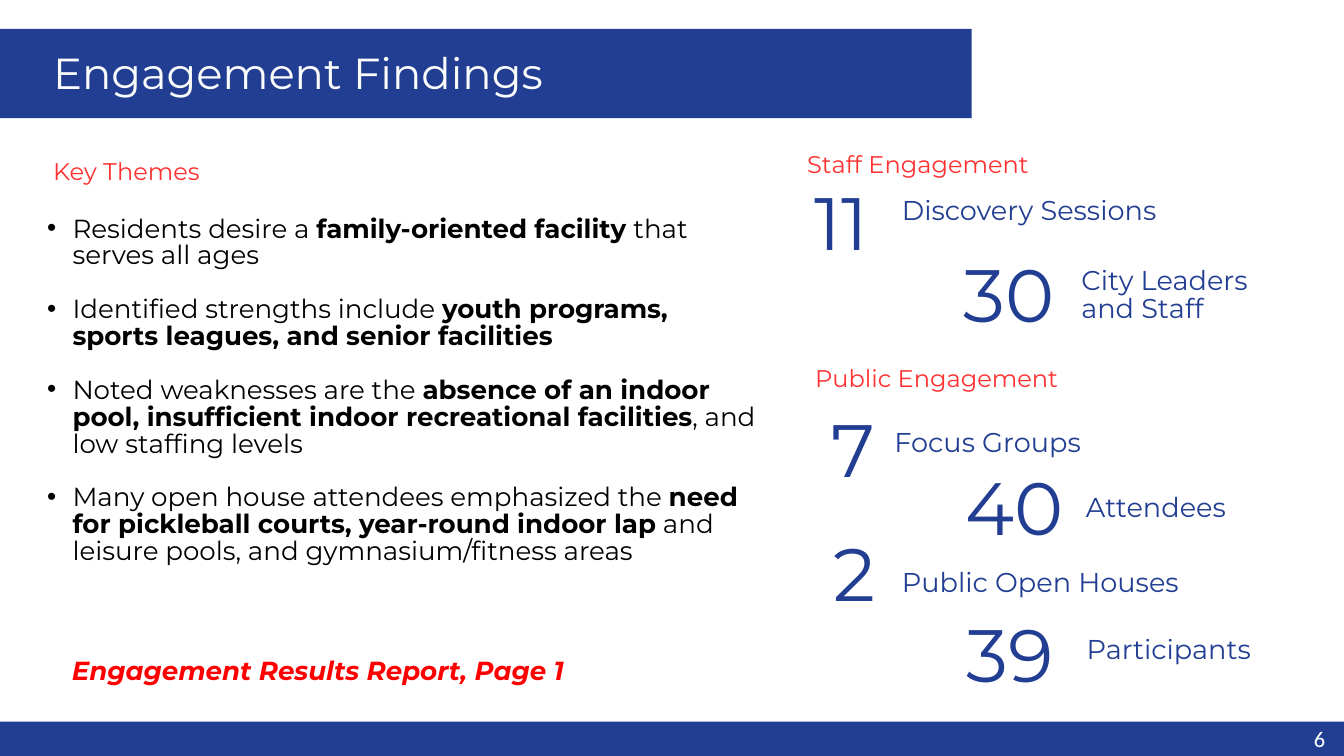
from lxml import etree
from pptx import Presentation
from pptx.dml.color import RGBColor
from pptx.enum import shapes, text
from pptx.oxml import ns
from pptx.util import Inches, Pt

BLUE = RGBColor(0x22, 0x3E, 0x92)
CORAL = RGBColor(0xFF, 0x31, 0x31)
RED = RGBColor(0xFF, 0, 0)
BLACK = RGBColor(0, 0, 0)
PALE = RGBColor(0xFB, 0xFC, 0xFC)
WHITE = RGBColor(0xFF, 0xFF, 0xFF)

# left, top, width, height
BARS = [(0, 10.74, 20, 0.51), (0, 0.43, 14.46, 1.33)]

HEADS = [
    ("Key Themes", 0.79, 2.4),
    ("Staff Engagement", 12.01, 2.29),
    ("Public Engagement", 12.13, 5.48),
]

# Each theme is a list of (words, bold) runs
THEMES = [
    [("Residents desire a ", False), ("family-oriented facility ", True),
     ("that serves all ages", False)],
    [("Identified strengths include ", False),
     ("youth programs, sports leagues, and senior facilities", True)],
    [("Noted weaknesses are the ", False),
     ("absence of an indoor pool, insufficient indoor recreational facilities", True),
     (", and low staffing levels", False)],
    [("Many open house attendees emphasized the ", False),
     ("need for pickleball courts, year-round indoor lap", True),
     (" and leisure pools, and gymnasium/fitness areas", False)],
]

# number, its left and top, label, its left, top and width
COUNTS = [
    ("11", 12.12, 2.84, "Discovery Sessions", 13.42, 2.96, 5.75),
    ("30", 14.34, 3.91, "City Leaders and Staff", 16.09, 4, 3.32),
    ("7", 12.37, 6.22, "Focus Groups", 13.31, 6.4, 3.32),
    ("40", 14.37, 7.07, "Attendees", 16.16, 7.37, 3.32),
    ("2", 12.41, 8.06, "Public Open Houses", 13.42, 8.49, 4.78),
    ("39", 14.38, 9.26, "Participants", 16.17, 9.49, 3.32),
]


def add_bullet(para, indent):
    props = para._p.get_or_add_pPr()
    props.set("marL", str(Inches(indent)))
    props.set("indent", str(-Inches(indent)))
    font = etree.SubElement(props, ns.qn("a:buFont"))
    font.set("typeface", "Arial")
    mark = etree.SubElement(props, ns.qn("a:buChar"))
    mark.set("char", "•")


def add_text(slide, paras, left, top, width, height, size, color, line=None,
             font="Montserrat", bold=False, italic=False, bullet=False, gap=0,
             pad=(0, 0), align=text.PP_ALIGN.LEFT, anchor=text.MSO_ANCHOR.TOP):
    """Add a text box; paras is a string or a list of lists of (words, bold)."""
    if isinstance(paras, str):
        paras = [[(paras, bold)]]
    box = slide.shapes.add_textbox(*map(Inches, (left, top, width, height)))
    frame = box.text_frame
    frame.word_wrap = True
    frame.vertical_anchor = anchor
    frame.margin_left = frame.margin_right = Inches(pad[0])
    frame.margin_top = frame.margin_bottom = Inches(pad[1])
    for i, runs in enumerate(paras):
        para = frame.paragraphs[0] if i == 0 else frame.add_paragraph()
        if bullet:
            add_bullet(para, 0.38)
        para.alignment = align
        if line:
            para.line_spacing = Pt(line)
        if i and gap:
            para.space_before = Pt(gap)
        for words, strong in runs:
            run = para.add_run()
            run.text = words
            run.font.name = font
            run.font.size = Pt(size)
            run.font.bold = strong
            run.font.italic = italic
            run.font.color.rgb = color


def main():
    deck = Presentation()
    deck.slide_width, deck.slide_height = Inches(20), Inches(11.25)
    slide = deck.slides.add_slide(deck.slide_layouts[6])

    for place in BARS:
        bar = slide.shapes.add_shape(shapes.MSO_SHAPE.RECTANGLE, *map(Inches, place))
        bar.shadow.inherit = False
        bar.fill.solid()
        bar.fill.fore_color.rgb = BLUE
        bar.line.fill.background()

    add_text(slide, "Engagement Findings", 0.79, 0.81, 13.66, 0.67, 46.5, PALE, line=46.9)
    for words, left, top in HEADS:
        add_text(slide, words, left, top, 6.73, 0.36, 25.8, CORAL, line=26.1)
    add_text(slide, THEMES, 0.7, 3.22, 10.56, 6.1, 28, BLACK, line=28.8,
             bullet=True, gap=28.8)
    for number, left, top, label, start, level, width in COUNTS:
        add_text(slide, number, left, top, 4.49, 1.16, 79.4, BLUE, line=80.2)
        add_text(slide, label, start, level, width, 0.41, 29.1, BLUE, line=29.4)
    add_text(slide, "Engagement Results Report, Page 1", 0.97, 9.75, 10.28, 0.51,
             28, RED, line=28.8, bold=True, italic=True, pad=(0.1, 0.05))
    add_text(slide, "6", 17.49, 10.79, 2.33, 0.4, 24, WHITE, font="Calibri",
             pad=(0.1, 0.05), align=text.PP_ALIGN.RIGHT, anchor=text.MSO_ANCHOR.MIDDLE)

    deck.save("out.pptx")


if __name__ == "__main__":
    main()
